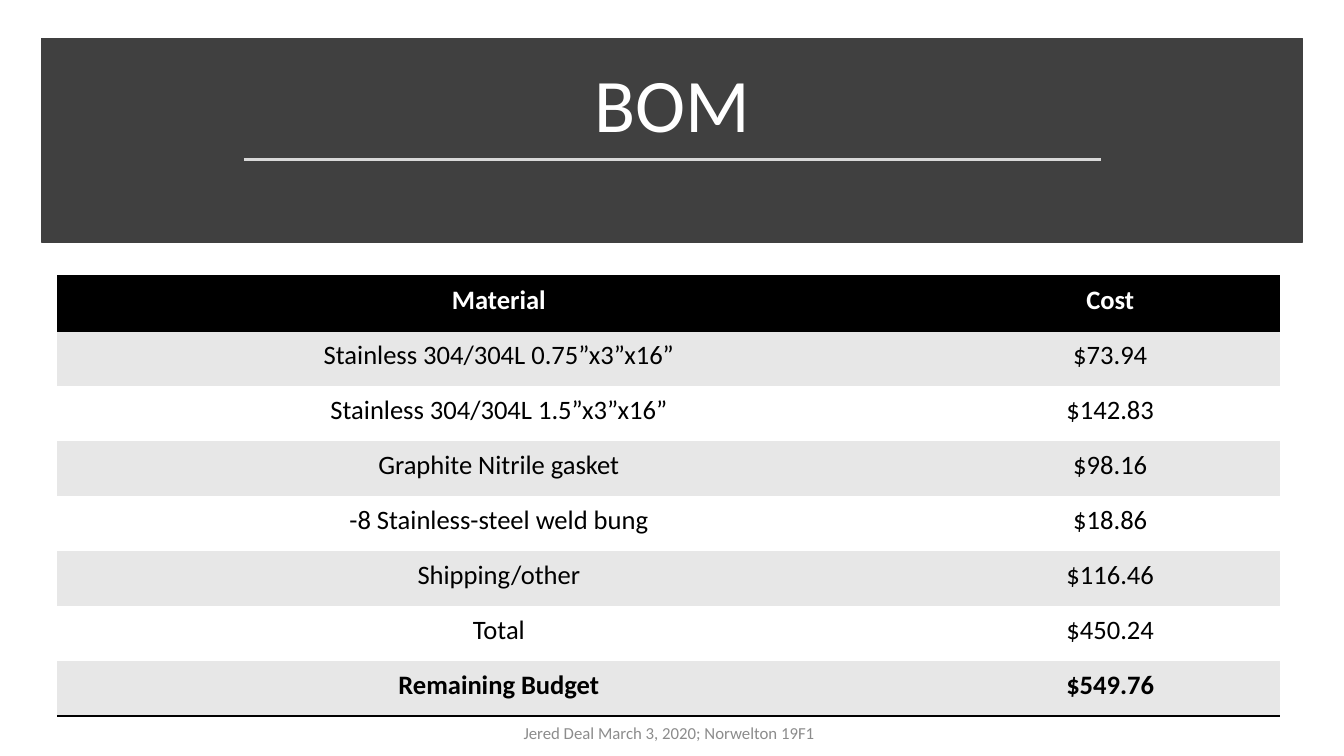
from lxml import etree
from pptx import Presentation
from pptx.dml.color import RGBColor
from pptx.enum.shapes import MSO_CONNECTOR, MSO_SHAPE
from pptx.enum.text import MSO_ANCHOR, PP_ALIGN
from pptx.oxml.ns import qn
from pptx.util import Pt

RECTANGLE = MSO_SHAPE.RECTANGLE
STRAIGHT = MSO_CONNECTOR.STRAIGHT
CENTER = PP_ALIGN.CENTER
BOTTOM, MIDDLE = MSO_ANCHOR.BOTTOM, MSO_ANCHOR.MIDDLE

FONT = "Calibri"
TITLE_ONLY = 5
PLAIN_TABLE_STYLE = "{2D5ABB26-0587-4C30-8999-92F81FD0307C}"
COLORS = {
    "band": "404040",
    "rule": "D9D9D9",
    "stripe": "E7E7E7",
    "footer": "8C8C8C",
    "black": "000000",
    "white": "FFFFFF",
}
MATERIALS = [
    ("Material", "Cost"),
    ("Stainless 304/304L 0.75”x3”x16”", "$73.94"),
    ("Stainless 304/304L 1.5”x3”x16”", "$142.83"),
    ("Graphite Nitrile gasket", "$98.16"),
    ("-8 Stainless-steel weld bung", "$18.86"),
    ("Shipping/other", "$116.46"),
    ("Total", "$450.24"),
    ("Remaining Budget", "$549.76"),
]
COLUMN_WIDTHS = (630.7, 242.7)
ROW_HEIGHT = 39.3


def rgb(color):
    return RGBColor.from_string(COLORS[color])


def write(frame, text, size, color, anchor=None, bold=False):
    """Put one centred, formatted paragraph into a text frame."""
    frame.text = text
    frame.word_wrap = True
    if anchor is not None:
        frame.vertical_anchor = anchor
    paragraph = frame.paragraphs[0]
    paragraph.alignment = CENTER
    font = paragraph.runs[0].font
    font.name, font.size, font.bold = FONT, Pt(size), bold
    font.color.rgb = rgb(color)


def add_title(slide, text):
    title = slide.shapes.title
    title.left, title.top, title.width, title.height = Pt(41.8), Pt(36.7), Pt(877), Pt(73.4)
    write(title.text_frame, text, 54, "white", BOTTOM)
    title.text_frame.paragraphs[0].line_spacing = 0.9


def add_band(slide):
    """Place the dark rectangle behind the title."""
    band = slide.shapes.add_shape(RECTANGLE, Pt(29.5), Pt(27.4), Pt(900.7), Pt(145.4))
    band.shadow.inherit = False
    band.fill.solid()
    band.fill.fore_color.rgb = rgb("band")
    band.line.color.rgb = rgb("band")
    band.line.width = Pt(1)
    slide.shapes.title.element.addprevious(band.element)


def add_rule(slide):
    y = Pt(113.8)
    rule = slide.shapes.add_connector(STRAIGHT, Pt(174.2), y, Pt(786.2), y)
    rule.line.color.rgb = rgb("rule")
    rule.line.width = Pt(1.75)
    etree.SubElement(rule.element.spPr, qn("a:effectLst"))


def add_border(cell, side):
    properties = cell._tc.get_or_add_tcPr()
    border = etree.SubElement(properties, qn(f"a:{side}"), w=str(Pt(2)))
    fill = etree.SubElement(border, qn("a:solidFill"))
    etree.SubElement(fill, qn("a:srgbClr"), val=COLORS["black"])


def format_cell(cell, text, row, last_row):
    is_header, is_last = row == 0, row == last_row
    cell.margin_left = cell.margin_right = Pt(12.2)
    cell.margin_top = cell.margin_bottom = Pt(6)
    write(cell.text_frame, text, 19, "white" if is_header else "black",
          bold=is_header or is_last)
    if is_header:
        add_border(cell, "lnT")
    if is_header or is_last:
        add_border(cell, "lnB")
    cell.fill.solid()
    cell.fill.fore_color.rgb = rgb("black" if is_header else "stripe" if row % 2 else "white")


def add_cost_table(slide):
    frame = slide.shapes.add_table(
        len(MATERIALS), len(COLUMN_WIDTHS), Pt(41), Pt(197.2),
        Pt(sum(COLUMN_WIDTHS)), Pt(ROW_HEIGHT * len(MATERIALS)))
    table = frame.table
    table.horz_banding = False
    for style in frame.element.iter(qn("a:tableStyleId")):
        style.text = PLAIN_TABLE_STYLE
    for column, width in zip(table.columns, COLUMN_WIDTHS):
        column.width = Pt(width)
    for row, texts in enumerate(MATERIALS):
        table.rows[row].height = Pt(ROW_HEIGHT)
        for column, text in enumerate(texts):
            format_cell(table.cell(row, column), text, row, len(MATERIALS) - 1)


def add_footer(slide, text):
    footer = slide.shapes.add_textbox(Pt(316), Pt(509), Pt(324), Pt(28.8))
    write(footer.text_frame, text, 12, "footer", MIDDLE)


def main():
    deck = Presentation()
    deck.slide_width, deck.slide_height = Pt(960), Pt(540)
    slide = deck.slides.add_slide(deck.slide_layouts[TITLE_ONLY])
    add_band(slide)
    add_title(slide, "BOM")
    add_rule(slide)
    add_cost_table(slide)
    add_footer(slide, "Jered Deal March 3, 2020; Norwelton 19F1")
    deck.save("out.pptx")


if __name__ == "__main__":
    main()
